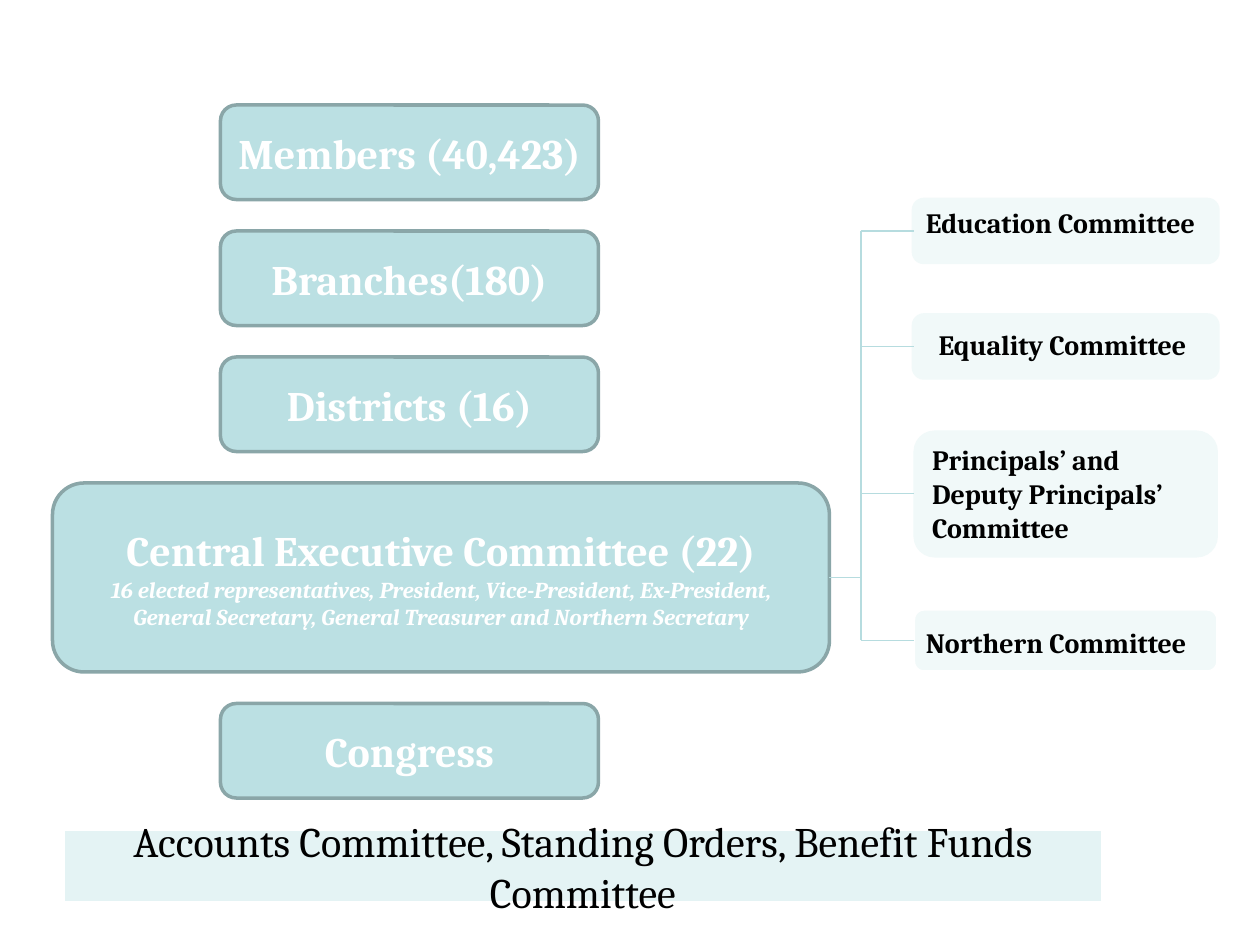
from dataclasses import dataclass

import pptx
import pptx.dml.color
import pptx.enum.shapes
import pptx.enum.text
import pptx.oxml.ns
import pptx.util

SHAPE = pptx.enum.shapes.MSO_SHAPE
ALIGN = pptx.enum.text.PP_ALIGN
ANCHOR = pptx.enum.text.MSO_ANCHOR
AUTO_SIZE = pptx.enum.text.MSO_AUTO_SIZE

CELLS_PER_INCH = 12
COLUMNS, ROWS = 120, 90


@dataclass(frozen=True)
class Theme:
    font: str = "Cambria"
    white: str = "FFFFFF"
    black: str = "000000"
    level: str = "BBE0E3"
    level_edge: str = "8AA6A8"
    committee: str = "F1F9F9"
    footer: str = "E4F3F4"
    connector: str = "B6DCDF"
    title_size: int = 24
    label_size: int = 16
    detail_size: int = 13
    edge_width: float = 2
    connector_width: float = 0.75


THEME = Theme()


def cells(*counts):
    """Turn grid cells into lengths."""
    return [pptx.util.Inches(count / CELLS_PER_INCH) for count in counts]


def rgb(code):
    return pptx.dml.color.RGBColor.from_string(code)


def write(shape, lines, size, color, bold=True, align=None):
    frame = shape.text_frame
    frame.word_wrap = True
    frame.text = "\n".join(lines)
    for para in frame.paragraphs:
        para.alignment = align
        for span in para.runs:
            span.font.name = THEME.font
            span.font.size = pptx.util.Pt(size)
            span.font.bold = bold
            span.font.color.rgb = rgb(color)
    return frame


def add_panel(page, place, fill, edge=None, kind=SHAPE.ROUNDED_RECTANGLE):
    panel = page.shapes.add_shape(kind, *cells(*place))
    panel.shadow.inherit = False
    panel.fill.solid()
    panel.fill.fore_color.rgb = rgb(fill)
    if edge:
        panel.line.color.rgb = rgb(edge)
        panel.line.width = pptx.util.Pt(THEME.edge_width)
    else:
        panel.line.fill.background()
    return panel


def add_level(page, place, title, detail=None):
    """Add one level of the organisation, with an optional italic detail."""
    panel = add_panel(page, place, THEME.level, THEME.level_edge)
    lines = [title, detail] if detail else [title]
    frame = write(panel, lines, THEME.title_size, THEME.white, align=ALIGN.CENTER)
    frame.vertical_anchor = ANCHOR.MIDDLE
    if detail:
        font = frame.paragraphs[1].runs[0].font
        font.size = pptx.util.Pt(THEME.detail_size)
        font.italic = True


def add_label(page, place, text, wrap=False):
    box = page.shapes.add_textbox(*cells(*place))
    frame = write(box, [text], THEME.label_size, THEME.black)
    frame.word_wrap = wrap
    frame.auto_size = AUTO_SIZE.SHAPE_TO_FIT_TEXT


def add_line(page, *ends):
    line = page.shapes.add_connector(
        pptx.enum.shapes.MSO_CONNECTOR.STRAIGHT, *cells(*ends))
    line.line.color.rgb = rgb(THEME.connector)
    line.line.width = pptx.util.Pt(THEME.connector_width)
    properties = line._element.spPr
    properties.append(properties.makeelement(pptx.oxml.ns.qn("a:effectLst"), {}))


def add_levels(page):
    levels = [(10, "Members (40,423)"), (22, "Branches(180)"),
              (34, "Districts (16)"), (67, "Congress")]
    for row, title in levels:
        add_level(page, (21, row, 36, 9), title)
    add_level(page, (5, 46, 74, 18), "Central Executive Committee (22)",
              "16 elected representatives, President, Vice-President, "
              "Ex-President, General Secretary, General Treasurer and "
              "Northern Secretary")


def add_committees(page):
    left, width = 87, 29
    panels = [(19, THEME.committee), (30, THEME.committee), (58, THEME.white)]
    for row, edge in panels:
        add_panel(page, (left, row, width, 6), THEME.committee, edge)
    principals = add_panel(page, (left, 41, width, 12.1), THEME.committee)
    frame = write(principals, ["Principals’ and Deputy Principals’ Committee"],
                  THEME.label_size, THEME.black, align=ALIGN.LEFT)
    frame.vertical_anchor = ANCHOR.TOP
    frame.auto_size = AUTO_SIZE.SHAPE_TO_FIT_TEXT
    add_label(page, (left, 19, 28.9, 4.4), "Education Committee")
    add_label(page, (88.2, 30.6, 26.8, 4.4), "Equality Committee")
    add_label(page, (left, 59, width, 4.4), "Northern Committee", wrap=True)


def add_branch_lines(page):
    executive_edge, trunk, committee_edge = 79, 82, 87
    stubs = [22, 33, 47, 61]
    add_line(page, executive_edge, 55, trunk, 55)
    add_line(page, trunk, stubs[0], trunk, stubs[-1])
    for row in stubs:
        add_line(page, trunk, row, committee_edge, row)


def add_footer(page):
    panel = add_panel(page, (6, 79, 99, 7), THEME.footer, THEME.white,
                      SHAPE.RECTANGLE)
    frame = write(panel,
                  ["Accounts Committee, Standing Orders, Benefit Funds Committee"],
                  THEME.title_size, THEME.black, bold=False, align=ALIGN.CENTER)
    frame.vertical_anchor = ANCHOR.MIDDLE


def main():
    deck = pptx.Presentation()
    deck.slide_width, deck.slide_height = cells(COLUMNS, ROWS)
    page = deck.slides.add_slide(deck.slide_layouts[6])
    add_levels(page)
    add_committees(page)
    add_branch_lines(page)
    add_footer(page)
    deck.save("out.pptx")


if __name__ == "__main__":
    main()
